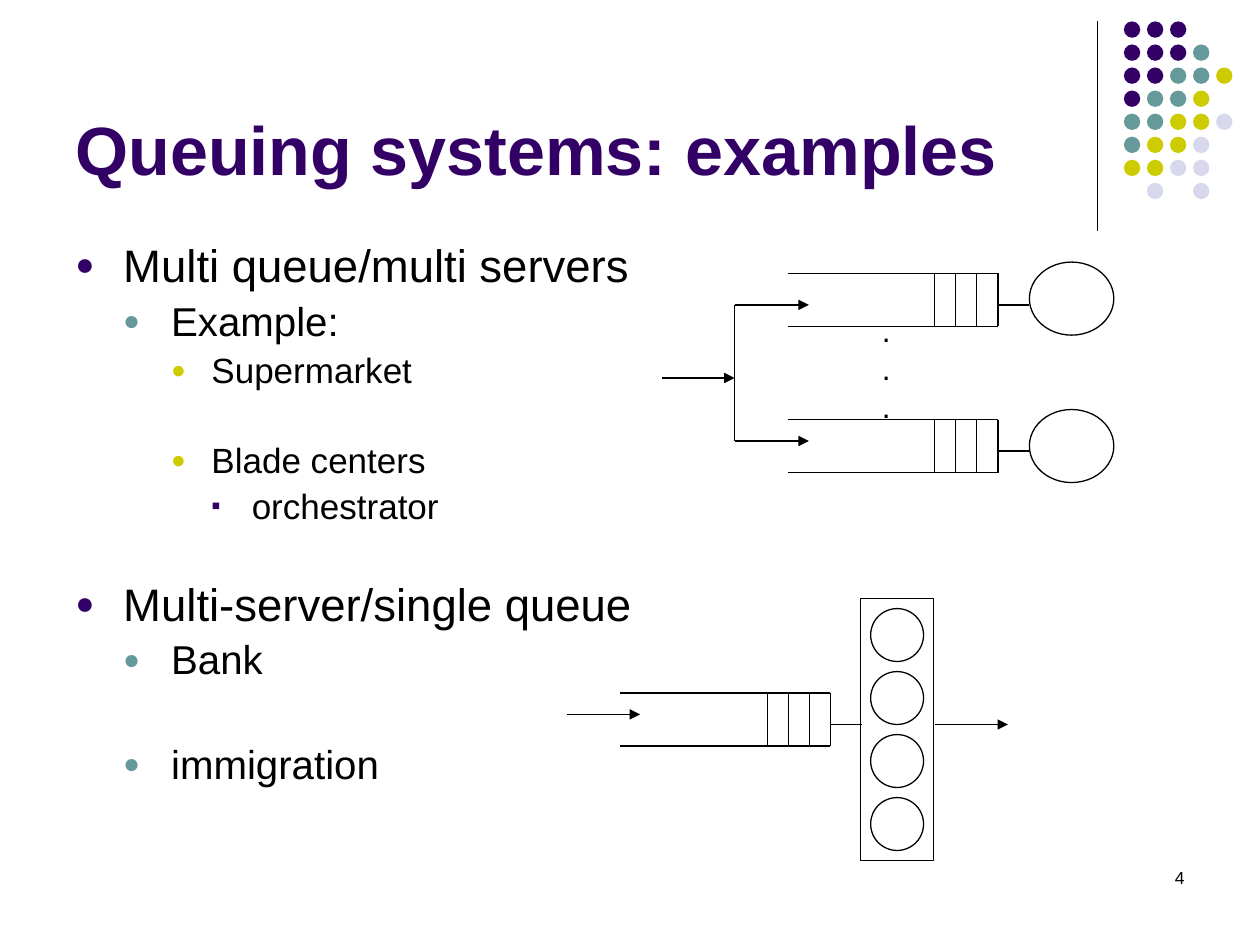
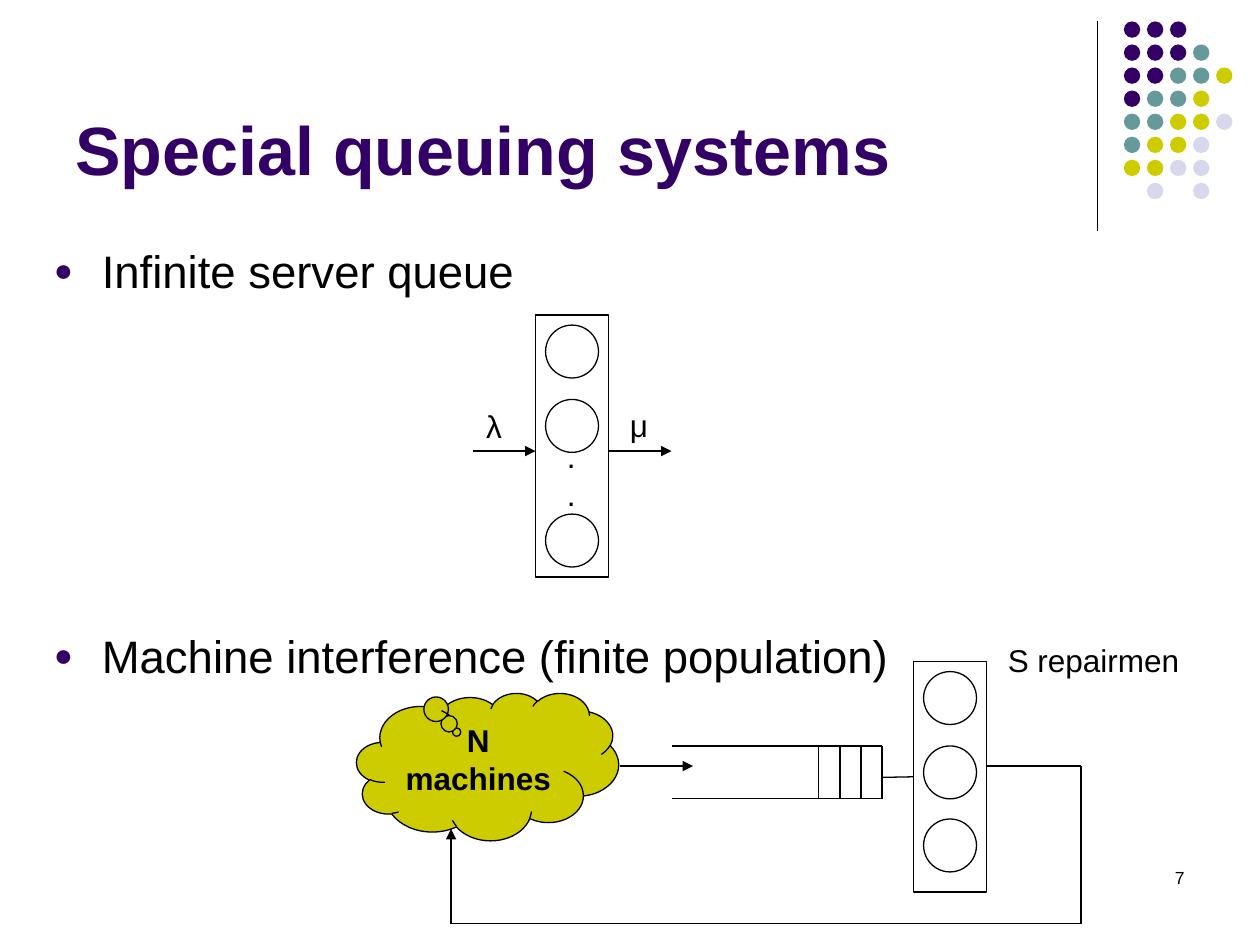
from lxml import etree
from pptx import Presentation
from pptx import util as u
from pptx.dml.color import RGBColor
from pptx.enum import shapes, text
from pptx.oxml import ns

PURPLE = RGBColor(0x33, 0x00, 0x66)
TEAL = RGBColor(0x66, 0x99, 0x99)
OLIVE = RGBColor(0xCC, 0xCC, 0x00)
LILAC = RGBColor(0xD8, 0xD8, 0xEC)
BLACK = RGBColor(0x00, 0x00, 0x00)
DOT_COLOURS = {"P": PURPLE, "T": TEAL, "O": OLIVE, "L": LILAC}
DOT_ROWS = ["PPP", "PPPT", "PPTTO", "PTTO", "TTOOL", "TOOL", "OOLL", ".L.L"]

LEVELS = [
    {"size": 26, "margin": 0.38, "hang": 0.38, "mark": "●", "colour": PURPLE, "percent": 70},
    {"size": 23, "margin": 0.76, "hang": 0.38, "mark": "●", "colour": TEAL, "percent": 70},
    {"size": 20, "margin": 1.08, "hang": 0.32, "mark": "●", "colour": OLIVE, "percent": 70},
    {"size": 20, "margin": 1.40, "hang": 0.32, "mark": "▪", "colour": PURPLE, "percent": 75},
]
TITLE = {"size": u.Pt(39), "bold": True}
LABEL = {"size": u.Pt(18)}
NUMBER = {"size": u.Pt(10)}
CLOUD = {"size": u.Pt(18), "bold": True}
OVAL = shapes.MSO_SHAPE.OVAL
RECT = shapes.MSO_SHAPE.RECTANGLE

QUEUE_LENGTH, QUEUE_HEIGHT, OUTLET = 1.67, 0.42, 0.25
RACK_WIDTH, SERVER_SIZE = 0.58, 0.42

PAGES = [
    {
        "title": "Queuing systems: examples",
        "number": "4",
        "body_left": 0.5,
        "line_spacing": 0.9,
        "bullets": [
            (0, 6, "Multi queue/multi servers"),
            (1, 5.3, "Example:"),
            (2, 4.6, "Supermarket"),
            (2, 30, "Blade centers"),
            (3, 4.6, "orchestrator"),
            (0, 31.4, "Multi-server/single queue"),
            (1, 5.3, "Bank"),
            (1, 34.7, "immigration"),
        ],
        "queues": [(6.25, 2.17), (6.25, 3.33), (4.92, 5.5)],
        "single_servers": [(8.17, 2.08), (8.17, 3.25)],
        "racks": [(6.83, 4.75, 2.08, [4.83, 5.33, 5.83, 6.33])],
        "labels": [(6.9, 2.42, 0.27, 1, [".", ".", "."])],
        "arrows": [
            [(5.25, 3), (5.83, 3)],
            [(5.83, 2.96), (5.83, 2.42), (6.42, 2.42)],
            [(5.83, 2.96), (5.83, 3.5), (6.42, 3.5)],
            [(4.5, 5.67), (5.08, 5.67)],
            [(7.42, 5.75), (8, 5.75)],
        ],
        "clouds": [],
    },
    {
        "title": "Special queuing systems",
        "number": "7",
        "body_left": 0.33,
        "line_spacing": 1.0,
        "bullets": [
            (0, 6, "Infinite server queue"),
            (0, 189, "Machine interference (finite population)"),
        ],
        "queues": [(5.33, 5.92)],
        "single_servers": [],
        "racks": [
            (4.25, 2.5, 2.08, [2.58, 3.17, 4.08]),
            (7.25, 5.25, 1.83, [5.33, 5.92, 6.5]),
        ],
        "labels": [
            (4.4, 3.42, 0.27, 0.7, [".", "."]),
            (3.76, 3.18, 0.33, 0.4, ["λ"]),
            (4.9, 3.17, 0.35, 0.4, ["μ"]),
            (7.9, 5.04, 1.56, 0.4, ["S repairmen"]),
        ],
        "arrows": [
            [(3.75, 3.58), (4.25, 3.58)],
            [(4.83, 3.58), (5.33, 3.58)],
            [(7.83, 6.08), (8.58, 6.08), (8.58, 7.33), (3.58, 7.33), (3.58, 6.58)],
            [(4.92, 6.08), (5.5, 6.08)],
        ],
        "clouds": [(2.83, 5.5, 2.08, 1.17, ["N", "machines"])],
    },
]


def draw_line(page, points, arrow=False):
    for start, end in zip(points, points[1:]):
        line = page.shapes.add_connector(
            shapes.MSO_CONNECTOR.STRAIGHT, *map(u.Inches, start + end))
        line.line.color.rgb = BLACK
        line.line.width = u.Pt(0.75)
        properties = line._element.spPr
        etree.SubElement(properties, ns.qn("a:effectLst"))
    if arrow:
        outline = properties.find(ns.qn("a:ln"))
        etree.SubElement(outline, ns.qn("a:tailEnd"), type="triangle")
    return line


def write(box, lines, font, colour=BLACK, **layout):
    frame = box.text_frame
    align = layout.pop("align", None)
    for name, value in ({"word_wrap": True} | layout).items():
        setattr(frame, name, value)
    for index, line in enumerate(lines):
        para = frame.add_paragraph() if index else frame.paragraphs[0]
        para.alignment = align
        span = para.add_run()
        span.text = line
        for name, value in ({"name": "Arial"} | font).items():
            setattr(span.font, name, value)
        span.font.color.rgb = colour
    return frame


deck = Presentation()
deck.slide_width = u.Inches(10)
deck.slide_height = u.Inches(7.5)

for content in PAGES:
    page = deck.slides.add_slide(deck.slide_layouts[6])

    draw_line(page, [(8.71, 0.17), (8.71, 1.83)])
    for row, letters in enumerate(DOT_ROWS):
        for column, letter in enumerate(letters):
            if letter in DOT_COLOURS:
                place = (8.92 + column * 0.183, 0.17 + row * 0.183, 0.13, 0.13)
                dot = page.shapes.add_shape(OVAL, *map(u.Inches, place))
                dot.shadow.inherit = False
                dot.fill.solid()
                dot.fill.fore_color.rgb = DOT_COLOURS[letter]
                dot.line.fill.background()

    number_box = page.shapes.add_textbox(*map(u.Inches, (7.17, 6.83, 2.33, 0.5)))
    write(number_box, [content["number"]], NUMBER, align=text.PP_ALIGN.RIGHT)
    title_box = page.shapes.add_textbox(*map(u.Inches, (0.5, 0.13, 8.25, 1.42)))
    write(title_box, [content["title"]], TITLE, PURPLE,
          vertical_anchor=text.MSO_ANCHOR.BOTTOM)

    body_box = page.shapes.add_textbox(
        *map(u.Inches, (content["body_left"], 1.88, 9, 4.82)))
    body = write(body_box, [line for _, _, line in content["bullets"]], {})
    for para, (depth, gap, _) in zip(body.paragraphs, content["bullets"]):
        level = LEVELS[depth]
        para.level = depth
        para.line_spacing = content["line_spacing"]
        para.space_before = u.Pt(gap)
        para.runs[0].font.size = u.Pt(level["size"])
        bullet = para._p.get_or_add_pPr()
        bullet.set("marL", str(u.Inches(level["margin"])))
        bullet.set("indent", str(-u.Inches(level["hang"])))
        tint = etree.SubElement(bullet, ns.qn("a:buClr"))
        etree.SubElement(tint, ns.qn("a:srgbClr"), val=str(level["colour"]))
        etree.SubElement(bullet, ns.qn("a:buSzPct"), val=str(level["percent"] * 1000))
        etree.SubElement(bullet, ns.qn("a:buFont"), typeface="Arial")
        etree.SubElement(bullet, ns.qn("a:buChar"), char=level["mark"])

    outlines = [(OVAL, left, top, 0.67, 0.58) for left, top in content["single_servers"]]
    for left, top, height, server_tops in content["racks"]:
        outlines.append((RECT, left, top, RACK_WIDTH, height))
        for server_top in server_tops:
            outlines.append((OVAL, left + 0.08, server_top, SERVER_SIZE, SERVER_SIZE))
    racks = []
    for kind, *place in outlines:
        outline = page.shapes.add_shape(kind, *map(u.Inches, place))
        outline.shadow.inherit = False
        outline.fill.background()
        outline.line.color.rgb = BLACK
        outline.line.width = u.Pt(0.75)
        if kind == RECT:
            racks.append(outline)

    for left, top in content["queues"]:
        right, bottom = left + QUEUE_LENGTH, top + QUEUE_HEIGHT
        draw_line(page, [(left, top), (right, top), (right, bottom), (left, bottom)])
        for slot in range(1, 4):
            divider = right - slot * 0.167
            draw_line(page, [(divider, top), (divider, bottom)])
        exit_y = top + OUTLET
        outlet = draw_line(page, [(right, exit_y), (right + OUTLET, exit_y)])
        for rack in racks:
            middle = rack.top + rack.height // 2
            gap_x = abs(rack.left - outlet.end_x)
            gap_y = abs(middle - outlet.end_y)
            if max(gap_x, gap_y) < u.Inches(0.02):
                outlet.end_connect(rack, 1)

    for points in content["arrows"]:
        draw_line(page, points, arrow=True)

    for *place, lines in content["labels"]:
        label = page.shapes.add_textbox(*map(u.Inches, place))
        write(label, lines, LABEL, word_wrap=False,
              auto_size=text.MSO_AUTO_SIZE.SHAPE_TO_FIT_TEXT)

    for *place, lines in content["clouds"]:
        cloud = page.shapes.add_shape(
            shapes.MSO_SHAPE.CLOUD_CALLOUT, *map(u.Inches, place))
        cloud.adjustments[0], cloud.adjustments[1] = -0.118, -0.234
        cloud.shadow.inherit = False
        cloud.fill.solid()
        cloud.fill.fore_color.rgb = OLIVE
        cloud.line.color.rgb = BLACK
        cloud.line.width = u.Pt(0.75)
        write(cloud, lines, CLOUD, align=text.PP_ALIGN.CENTER,
              vertical_anchor=text.MSO_ANCHOR.TOP,
              margin_left=u.Inches(0.05), margin_right=u.Inches(0.05))

deck.save("out.pptx")
